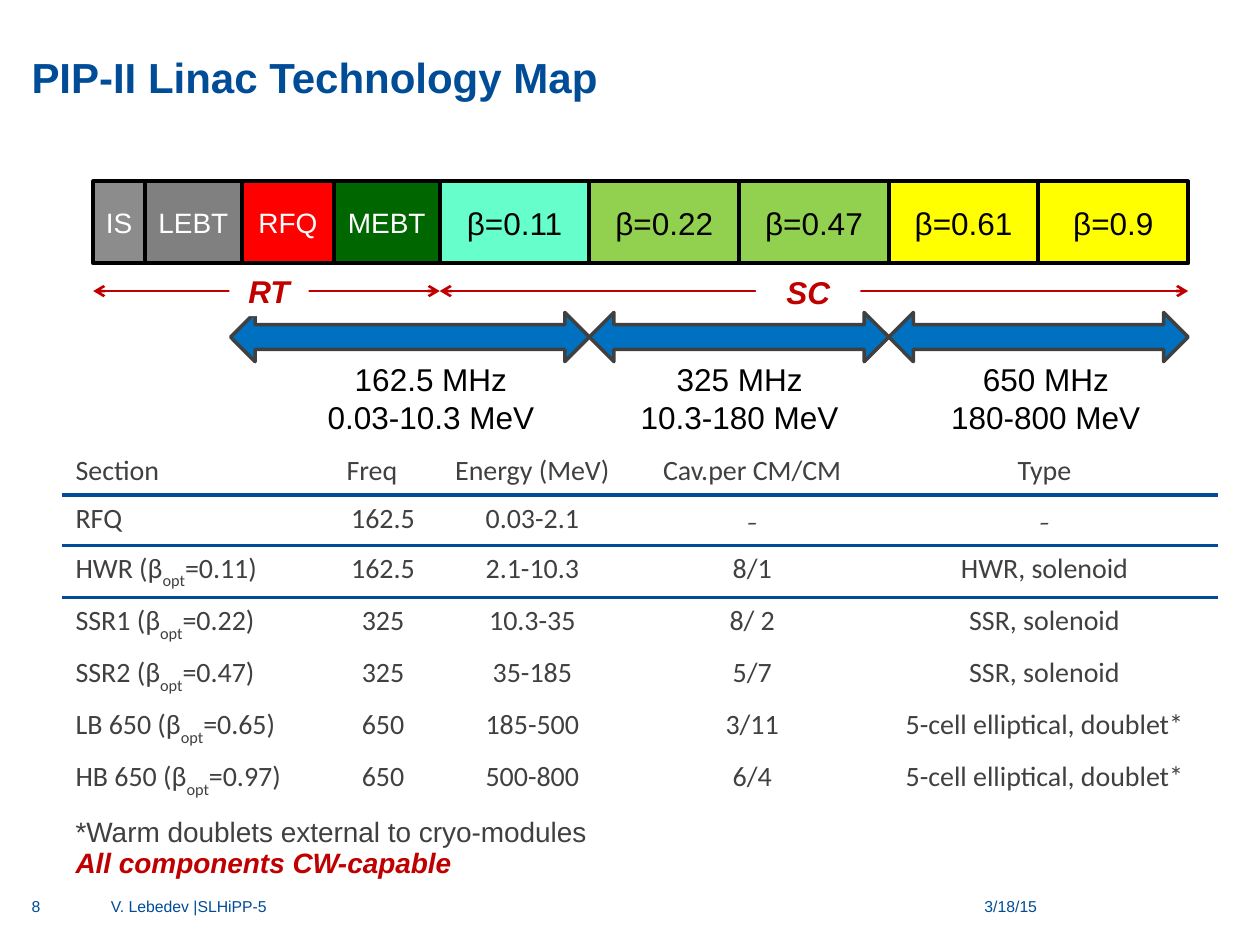
"""Build the PIP-II linac technology map slide."""
from itertools import accumulate

from lxml.etree import SubElement
from pptx import Presentation
from pptx.dml.color import RGBColor
from pptx.enum.shapes import MSO_CONNECTOR, MSO_SHAPE
from pptx.enum.text import MSO_ANCHOR, PP_ALIGN
from pptx.oxml import parse_xml
from pptx.oxml.ns import nsdecls, qn
from pptx.util import Inches, Pt

COLORS = {
    "navy": "004C97", "text": "404040", "crimson": "C00000", "arrow": "0070C0",
    "black": "000000", "white": "FFFFFF", "source": "8C8C8C", "gray": "808080",
    "red": "FF0000", "green": "006600", "aqua": "66FFCC", "lime": "92D050",
    "yellow": "FFFF00",
}
TITLE = "PIP-II Linac Technology Map"
LINAC_LEFT, LINAC_TOP, LINAC_HEIGHT = 0.74, 1.44, 0.65
SC_LEFT, LINAC_RIGHT = 3.49, 9.43
CAVITY_WIDTH = (LINAC_RIGHT - SC_LEFT) / 5
WARM_BLOCKS = [("IS", 0.41, "source"), ("LEBT", 0.77, "gray"),
               ("RFQ", 0.73, "red"), ("MEBT", 0.84, "green")]
COLD_BLOCKS = [("β=0.11", "aqua"), ("β=0.22", "lime"), ("β=0.47", "lime"),
               ("β=0.61", "yellow"), ("β=0.9", "yellow")]
REGIONS = [("RT", LINAC_LEFT, SC_LEFT, 1.82, 2.11, 0.63),
           ("SC", SC_LEFT, LINAC_RIGHT, 6.0, 2.12, 0.83)]
BANDS = [(["162.5 MHz", "0.03-10.3 MeV"], 1.83, 1, 3.42),
         (["325 MHz", "10.3-180 MeV"], SC_LEFT + CAVITY_WIDTH, 3, 5.87),
         (["650 MHz", "180-800 MeV"], SC_LEFT + 3 * CAVITY_WIDTH, 5, 8.3)]
SECTIONS = [
    ("Section", "Freq", "Energy (MeV)", "Cav.per CM/CM", "Type"),
    ("RFQ", "162.5", "0.03-2.1", "-", "-"),
    ("HWR (β|opt|=0.11)", "162.5", "2.1-10.3", "8/1", "HWR, solenoid"),
    ("SSR1 (β|opt|=0.22)", "325", "10.3-35", "8/ 2", "SSR, solenoid"),
    ("SSR2 (β|opt|=0.47)", "325", "35-185", "5/7", "SSR, solenoid"),
    ("LB 650 (β|opt|=0.65)", "650", "185-500", "3/11", "5-cell elliptical, doublet*"),
    ("HB 650 (β|opt|=0.97)", "650", "500-800", "6/4", "5-cell elliptical, doublet*"),
]
NOTES = ["*Warm doublets external to cryo-modules", "All components CW-capable"]
COLUMN_WIDTHS = [2.15, 0.78, 1.59, 1.9, 2.74]
HEADER_HEIGHT, ROW_HEIGHT, NOTES_HEIGHT = 0.38, 0.4, 0.63
FOOTER = [("8", 0.25, 0.49, PP_ALIGN.LEFT),
          ("V. Lebedev |SLHiPP-5", 0.88, 5.88, PP_ALIGN.LEFT),
          ("3/18/15", 7.05, 1.18, PP_ALIGN.RIGHT)]


def rgb(name):
    return RGBColor.from_string(COLORS[name])


def style(paragraph, size, color, align=PP_ALIGN.CENTER, face="Arial", strong=False):
    paragraph.alignment = align
    font = paragraph.font
    font.size, font.name, font.color.rgb = Pt(size), face, rgb(color)
    if strong:
        font.bold = font.italic = True


def remove_insets(frame):
    frame.margin_left = frame.margin_right = frame.margin_top = frame.margin_bottom = 0


def add_title(slide):
    title = slide.shapes.title
    title.left, title.top, title.width, title.height = map(Inches, (0.25, 0.11, 9.5, 0.7))
    frame = title.text_frame
    remove_insets(frame)
    frame.vertical_anchor = MSO_ANCHOR.BOTTOM
    frame.text = TITLE
    style(frame.paragraphs[0], 24, "navy", PP_ALIGN.LEFT)
    frame.paragraphs[0].font.bold = True


def add_text(slide, lines, box, size, color, align=PP_ALIGN.CENTER):
    frame = slide.shapes.add_textbox(*map(Inches, box)).text_frame
    frame.word_wrap = True
    frame.text = "\n".join(lines)
    for paragraph in frame.paragraphs:
        style(paragraph, size, color, align)
    return frame


def add_block(slide, kind, box, fill, outline=None, width=2.25):
    block = slide.shapes.add_shape(kind, *map(Inches, box))
    block.shadow.inherit = False
    block.fill.solid()
    block.fill.fore_color.rgb = rgb(fill)
    if outline:
        block.line.color.rgb, block.line.width = rgb(outline), Pt(width)
    else:
        block.line.fill.background()
    return block


def label_block(block, label, size, color, strong=False):
    frame = block.text_frame
    frame.word_wrap = False
    frame.vertical_anchor = MSO_ANCHOR.MIDDLE
    frame.text = label
    style(frame.paragraphs[0], size, color, strong=strong)


def add_span(slide, left, right, y):
    span = slide.shapes.add_connector(MSO_CONNECTOR.STRAIGHT, *map(Inches, (left, y, right, y)))
    span.line.color.rgb, span.line.width = rgb("crimson"), Pt(1.5)
    properties = span._element.spPr
    for end in ("a:headEnd", "a:tailEnd"):
        SubElement(properties.find(qn("a:ln")), qn(end), type="arrow")
    SubElement(properties, qn("a:effectLst"))


def add_linac(slide):
    blocks = [(label, width, fill, 16, "white") for label, width, fill in WARM_BLOCKS]
    blocks += [(label, CAVITY_WIDTH, fill, 18, "black") for label, fill in COLD_BLOCKS]
    lefts = accumulate((block[1] for block in blocks), initial=LINAC_LEFT)
    for left, (label, width, fill, size, color) in zip(lefts, blocks):
        block = add_block(slide, MSO_SHAPE.RECTANGLE,
                          (left, LINAC_TOP, width, LINAC_HEIGHT), fill, "black")
        label_block(block, label, size, color)


def add_bands(slide):
    for lines, left, last_cavity, center in BANDS:
        width = SC_LEFT + last_cavity * CAVITY_WIDTH - left
        add_block(slide, MSO_SHAPE.LEFT_RIGHT_ARROW, (left, 2.48, width, 0.39),
                  "arrow", "text", 2)
        add_text(slide, lines, (center - 1.1, 2.81, 2.2, 0.71), 18, "black")


def add_regions(slide):
    for label, left, right, label_left, label_top, label_width in REGIONS:
        add_span(slide, left, right, 2.31)
        plate = add_block(slide, MSO_SHAPE.RECTANGLE,
                          (label_left, label_top, label_width, 0.4), "white")
        label_block(plate, label, 18, "crimson", strong=True)


def add_border(cell, side):
    cell._tc.get_or_add_tcPr().insert(0, parse_xml(
        f'<a:{side} {nsdecls("a")} w="{Pt(2.25)}"><a:solidFill>'
        f'<a:srgbClr val="{COLORS["navy"]}"/></a:solidFill></a:{side}>'))


def add_sections(slide):
    heights = [HEADER_HEIGHT] + [ROW_HEIGHT] * (len(SECTIONS) - 1) + [NOTES_HEIGHT]
    table = slide.shapes.add_table(
        len(heights), len(COLUMN_WIDTHS),
        *map(Inches, (0.5, 3.55, sum(COLUMN_WIDTHS), sum(heights)))).table
    table.first_row = table.horz_banding = False
    for column, width in zip(table.columns, COLUMN_WIDTHS):
        column.width = Inches(width)
    for row, height in zip(table.rows, heights):
        row.height = Inches(height)
    for cell in table.iter_cells():
        cell.fill.solid()
        cell.fill.fore_color.rgb = rgb("white")
    for r, section in enumerate(SECTIONS):
        for c, value in enumerate(section):
            cell = table.cell(r, c)
            paragraph = cell.text_frame.paragraphs[0]
            for i, part in enumerate(value.split("|")):
                run = paragraph.add_run()
                run.text = part
                if i == 1:
                    run._r.get_or_add_rPr().set("baseline", "-30000")
            left_aligned = c == 0 or (r, c) == (0, 1)
            style(paragraph, 16, "text", PP_ALIGN.LEFT if left_aligned else PP_ALIGN.CENTER,
                  "TeX Gyre Bonum" if value == "-" else "Calibri")
            if r < 2:
                add_border(cell, "lnB")
            if r in (1, 2):
                add_border(cell, "lnT")
    notes = table.cell(len(SECTIONS), 0)
    notes.merge(table.cell(len(SECTIONS), len(COLUMN_WIDTHS) - 1))
    notes.vertical_anchor = MSO_ANCHOR.BOTTOM
    notes.text_frame.text = "\n".join(NOTES)
    remark, claim = notes.text_frame.paragraphs
    style(remark, 16, "text", PP_ALIGN.LEFT)
    style(claim, 16, "crimson", PP_ALIGN.LEFT, strong=True)


def main():
    deck = Presentation()
    deck.slide_width, deck.slide_height = Inches(10), Inches(7.5)
    slide = deck.slides.add_slide(deck.slide_layouts[5])
    add_title(slide)
    add_sections(slide)
    add_linac(slide)
    add_bands(slide)
    add_regions(slide)
    for text, left, width, align in FOOTER:
        remove_insets(add_text(slide, [text], (left, 7.12, width, 0.26), 9, "navy", align))
    deck.save("out.pptx")


if __name__ == "__main__":
    main()
